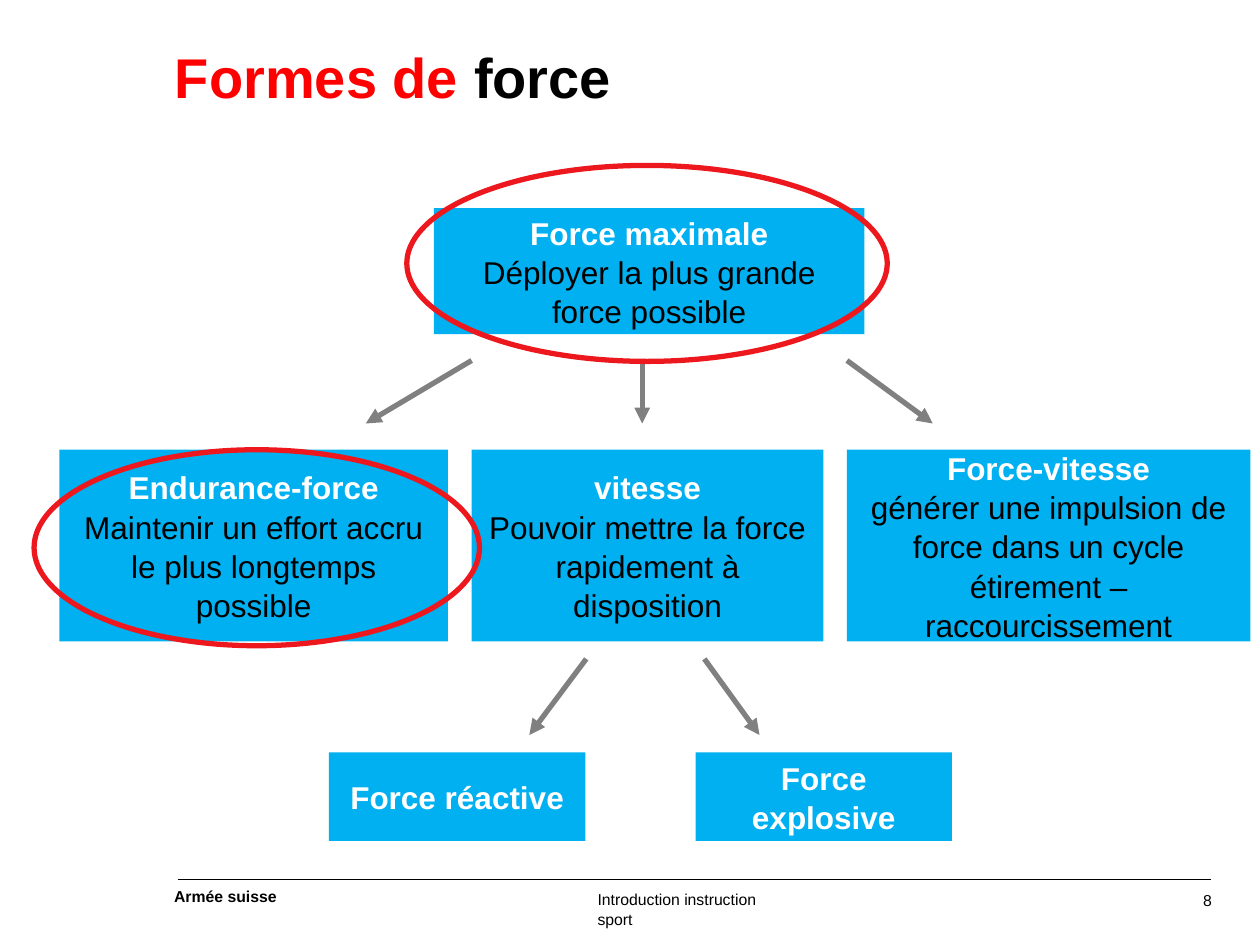
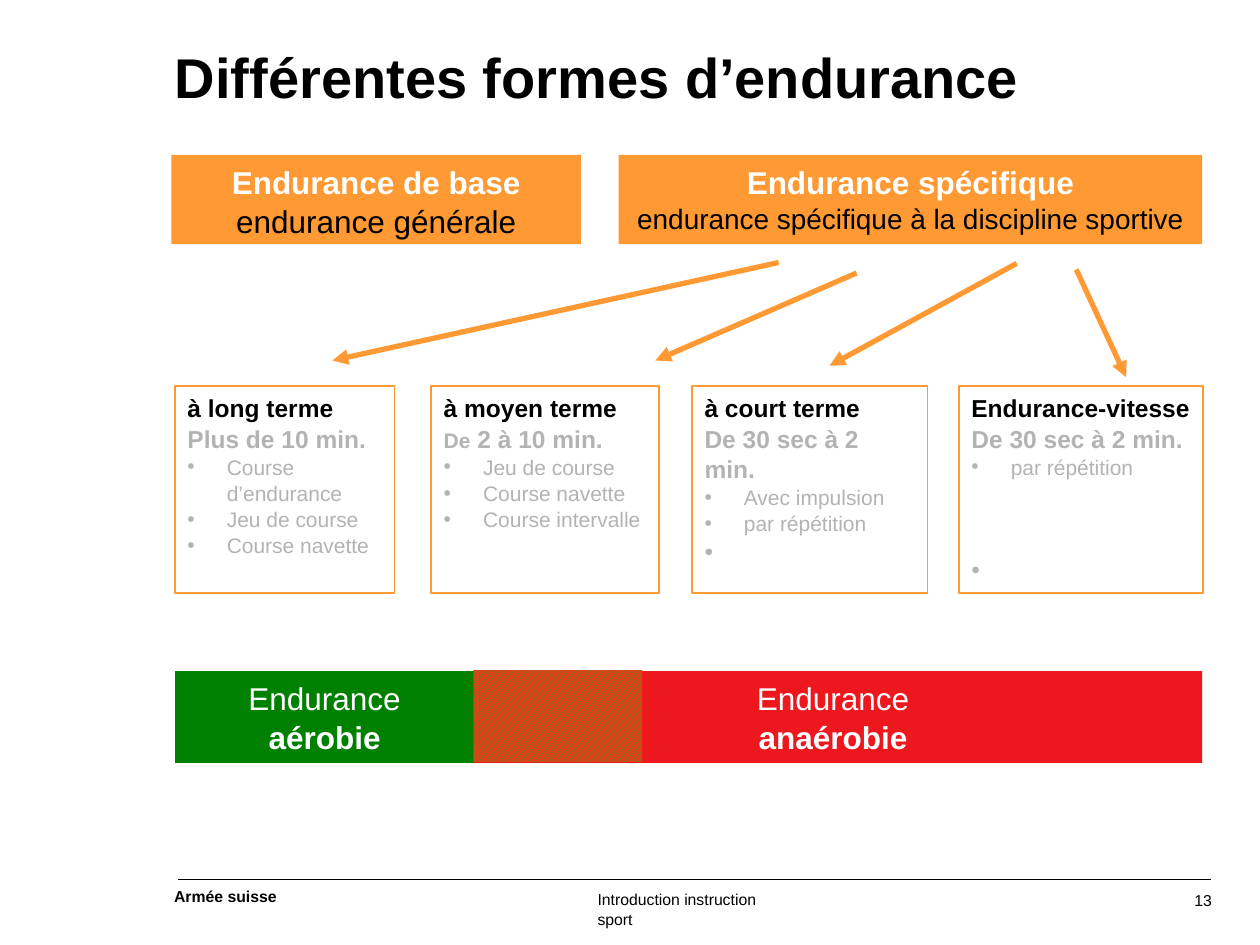
from lxml.etree import SubElement
from pptx import Presentation
from pptx.dml.color import RGBColor
from pptx.enum.dml import MSO_PATTERN
from pptx.enum.shapes import MSO_CONNECTOR, MSO_SHAPE
from pptx.enum.text import MSO_ANCHOR, PP_ALIGN
from pptx.oxml.ns import qn
from pptx.util import Pt

FONT = "Arial"
BLACK, WHITE, RED = "000000", "FFFFFF", "FF0000"
BLUE, ORANGE, GREEN, SIGNAL_RED = "00B0F0", "FF9933", "008000", "ED181E"
ARROW_GREY, TEXT_GREY = "808080", "B3B3B3"
LINE_SPACING = 1.04
BULLET_INDENT = 22.5


def add_block(slide, kind, place, lines=(), fill=None, outline=None, outline_width=1,
              align=PP_ALIGN.CENTER, anchor=MSO_ANCHOR.TOP, margins=(7.2, 3.6)):
    place = [Pt(length) for length in place]
    if kind is None:
        shape = slide.shapes.add_textbox(*place)
    else:
        shape = slide.shapes.add_shape(kind, *place)
        shape.shadow.inherit = False
        if fill:
            shape.fill.solid()
            shape.fill.fore_color.rgb = RGBColor.from_string(fill)
        else:
            shape.fill.background()
        if outline:
            shape.line.color.rgb = RGBColor.from_string(outline)
            shape.line.width = Pt(outline_width)
        else:
            shape.line.fill.background()
    frame = shape.text_frame
    frame.word_wrap = True
    frame.vertical_anchor = anchor
    frame.margin_left = frame.margin_right = Pt(margins[0])
    frame.margin_top = frame.margin_bottom = Pt(margins[1])
    for index, (text, size, color, bold, bullet) in enumerate(lines):
        paragraph = frame.add_paragraph() if index else frame.paragraphs[0]
        paragraph.add_run().text = text
        paragraph.alignment = align
        paragraph.line_spacing = LINE_SPACING
        if bullet:
            properties = paragraph._p.get_or_add_pPr()
            properties.set("marL", str(Pt(BULLET_INDENT)))
            properties.set("indent", str(-Pt(BULLET_INDENT)))
            SubElement(properties, qn("a:buFont"), typeface=FONT)
            SubElement(properties, qn("a:buChar"), char="•")
        paragraph.font.name = FONT
        paragraph.font.size = Pt(size)
        paragraph.font.bold = bold
        paragraph.font.color.rgb = RGBColor.from_string(color)
    return shape


def add_line(slide, points, color, width, arrow=True):
    line = slide.shapes.add_connector(MSO_CONNECTOR.STRAIGHT, *[Pt(value) for value in points])
    line.line.color.rgb = RGBColor.from_string(color)
    line.line.width = Pt(width)
    if arrow:
        SubElement(line.line._get_or_add_ln(), qn("a:tailEnd"), type="triangle")
    SubElement(line._element.spPr, qn("a:effectLst"))


presentation = Presentation()
presentation.slide_width = Pt(720)
presentation.slide_height = Pt(540)

slides, titles = [], []
for title, title_color, number in [("Formes de ", RED, "8"),
                                   ("Différentes formes d’endurance", BLACK, "13")]:
    slide = presentation.slides.add_slide(presentation.slide_layouts[6])
    for text, place, bold, align in [
        (number, (674.5, 508.5, 18, 11), False, PP_ALIGN.RIGHT),
        ("Armée suisse", (99.5, 506.25, 62, 13), True, PP_ALIGN.LEFT),
        ("Introduction instruction sport", (341.5, 508, 110, 25), False, PP_ALIGN.LEFT),
    ]:
        add_block(slide, None, place, [(text, 9, BLACK, bold, False)], align=align, margins=(0, 0))
    add_line(slide, (102, 502.5, 692, 502.5), BLACK, 0.75, arrow=False)
    titles.append(add_block(slide, None, (100, 22.5, 587.5, 78),
                            [(title, 32, title_color, True, False)],
                            align=PP_ALIGN.LEFT, margins=(0, 0)))
    slides.append(slide)

strength_slide, endurance_slide = slides

strength_word = titles[0].text_frame.paragraphs[0].add_run()
strength_word.text = "force"
strength_word.font.color.rgb = RGBColor.from_string(BLACK)

for points in [(367, 205, 367, 242), (269.5, 206, 209, 242), (484, 206, 533, 242),
               (335, 376.5, 302.5, 420), (402.5, 376.5, 434, 420)]:
    add_line(strength_slide, points, ARROW_GREY, 3)

for place, heading, details in [
    ((248, 119, 246, 72), "Force maximale", ["Déployer la plus grande", "force possible"]),
    ((34, 257, 222, 109.5), "Endurance-force",
     ["Maintenir un effort accru le plus longtemps possible"]),
    ((269.5, 257, 201, 109.5), "vitesse", ["Pouvoir mettre la force rapidement à disposition"]),
    ((484, 257, 230.5, 109.5), "Force-vitesse",
     ["générer une impulsion de force dans un cycle étirement – raccourcissement"]),
    ((188, 430, 146.5, 50.5), "Force réactive", []),
    ((397.5, 430, 146.5, 50.5), "Force explosive", []),
]:
    lines = [(heading, 18, WHITE, True, False)]
    lines += [(detail, 18, BLACK, False, False) for detail in details]
    add_block(strength_slide, MSO_SHAPE.RECTANGLE, place, lines, fill=BLUE,
              anchor=MSO_ANCHOR.MIDDLE)

for place in [(232.5, 94.5, 274.5, 112), (19.5, 257, 254.5, 112)]:
    add_block(strength_slide, MSO_SHAPE.OVAL, place, outline=SIGNAL_RED, outline_width=3)

for left, width, heading, detail, size in [
    (98, 234, "Endurance de base", "endurance générale", 18),
    (353.5, 333.5, "Endurance spécifique", "endurance spécifique à la discipline sportive", 16),
]:
    add_block(endurance_slide, MSO_SHAPE.RECTANGLE, (left, 88.5, width, 51),
              [(heading, 18, WHITE, True, False), (detail, size, BLACK, False, False)], fill=ORANGE)

term_boxes = []
for left, width, heading, duration, activities in [
    (100, 125.5, "à long terme", "Plus de 10 min.",
     ["Course d’endurance", "Jeu de course", "Course navette"]),
    (246.5, 130, "à moyen terme", "De", ["Jeu de course", "Course navette", "Course intervalle"]),
    (395.5, 134.5, "à court terme", "De 30 sec à 2 min.", ["Avec impulsion", "par répétition", " "]),
    (548, 139.5, "Endurance-vitesse", "De 30 sec à 2 min.", ["par répétition", " "]),
]:
    lines = [(heading, 14, BLACK, True, False), (duration, 14, TEXT_GREY, True, False)]
    lines += [(activity, 12 if activity.strip() else 14, TEXT_GREY, False, True)
              for activity in activities]
    term_boxes.append(add_block(endurance_slide, MSO_SHAPE.RECTANGLE, (left, 220.5, width, 118.5),
                                lines, outline=ORANGE, align=PP_ALIGN.LEFT))

medium_duration = term_boxes[1].text_frame.paragraphs[1]
medium_duration.runs[0].font.size = Pt(12)
medium_duration.add_run().text = " 2 à 10 min."
term_boxes[3].text_frame.paragraphs[-1].space_before = Pt(43)

for left, width, kind, color in [(265, 422, "anaérobie", SIGNAL_RED), (100, 171, "aérobie", GREEN)]:
    add_block(endurance_slide, MSO_SHAPE.RECTANGLE, (left, 383.5, width, 52.5),
              [("Endurance", 18, WHITE, False, False), (kind, 18, WHITE, True, False)], fill=color)

for points in [(445, 150, 190, 206), (489.5, 156, 374.5, 206),
               (581, 150.5, 474, 209), (615, 154, 643.5, 215.5)]:
    add_line(endurance_slide, points, ORANGE, 3)

overlap = add_block(endurance_slide, MSO_SHAPE.RECTANGLE, (270.5, 383, 96.5, 52.5))
overlap.fill.patterned()
overlap.fill.pattern = MSO_PATTERN.WIDE_UPWARD_DIAGONAL
overlap.fill.fore_color.rgb = RGBColor.from_string("00B050")
overlap.fill.back_color.rgb = RGBColor.from_string("DA4314")

presentation.save("out.pptx")
